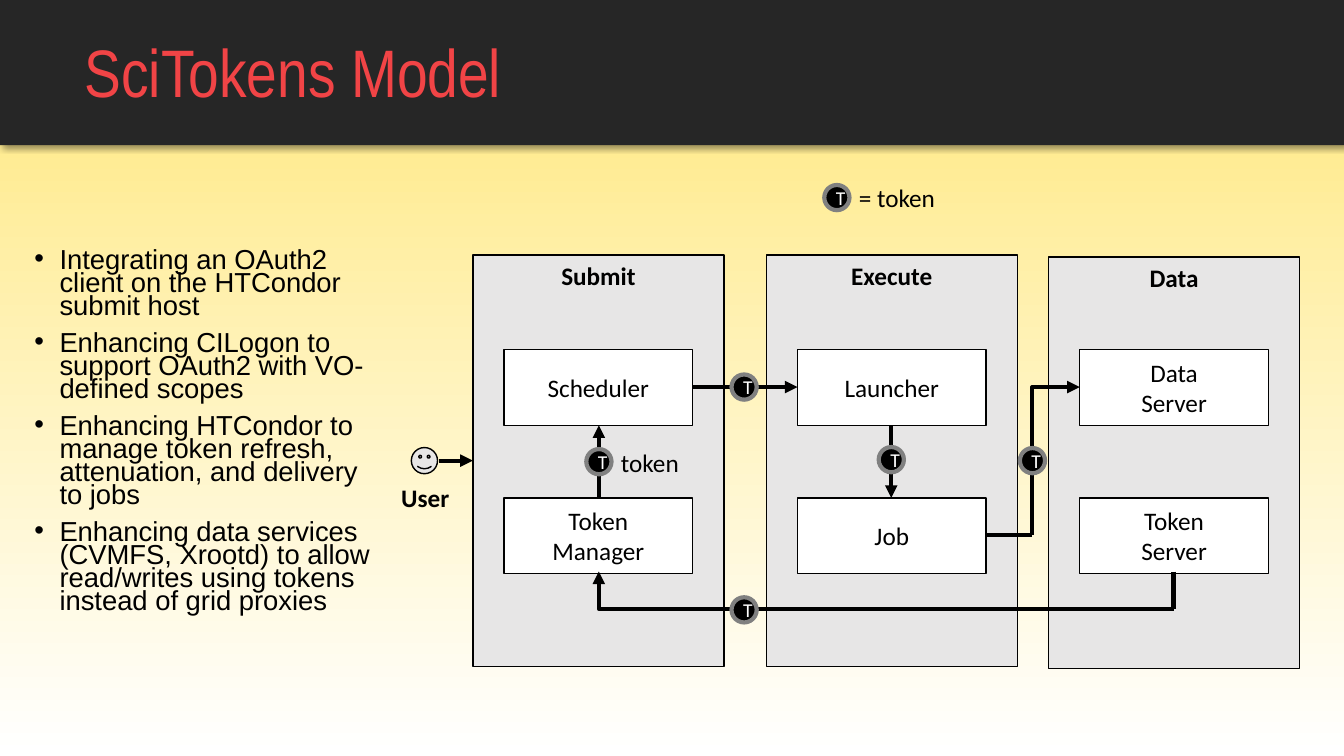
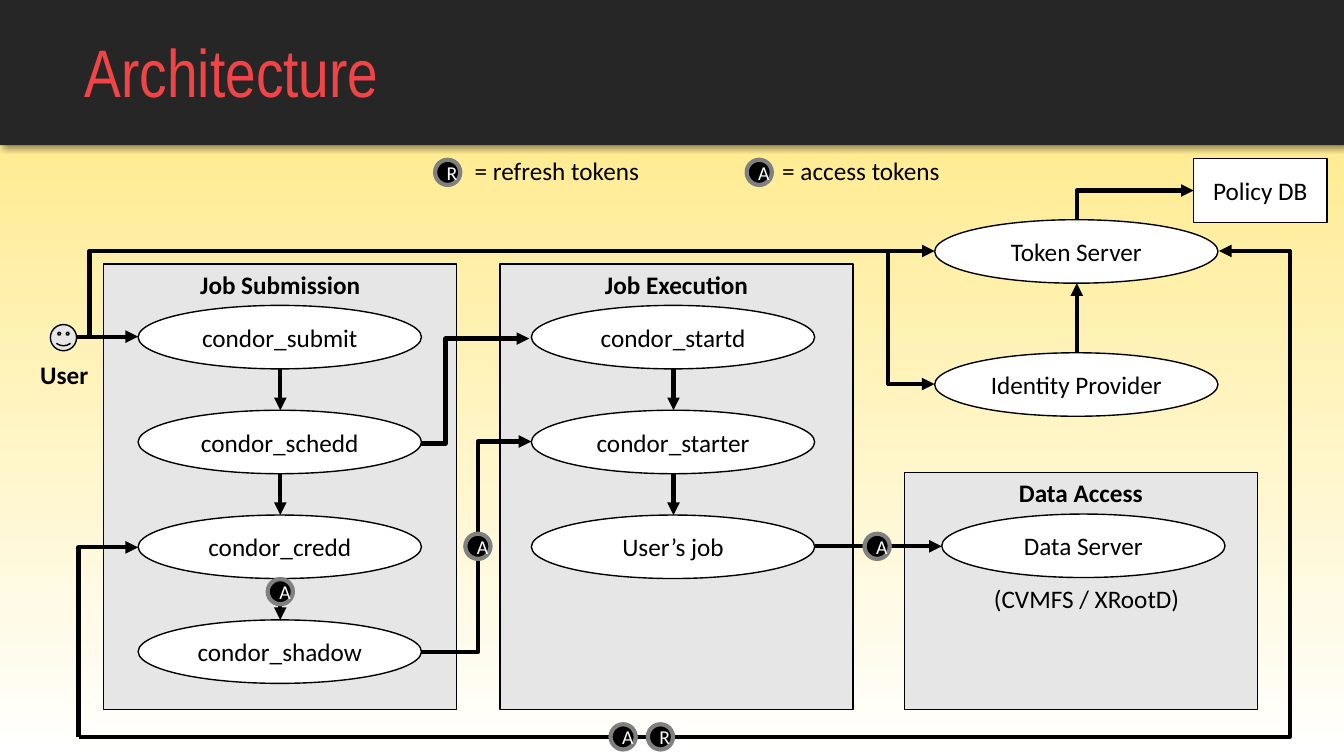
from lxml import etree
from pptx import Presentation
from pptx.dml.color import RGBColor
from pptx.enum.shapes import MSO_CONNECTOR as Link, MSO_SHAPE as Shape
from pptx.enum.text import MSO_ANCHOR as Anchor, MSO_AUTO_SIZE as AutoSize, PP_ALIGN as Align
from pptx.oxml.ns import qn
from pptx.util import Inches, Pt

BLACK = RGBColor(0x00, 0x00, 0x00)
WHITE = RGBColor(0xFF, 0xFF, 0xFF)
PANEL = RGBColor(0xE7, 0xE6, 0xE6)
RING = RGBColor(0x80, 0x80, 0x80)
BAND = RGBColor(0x26, 0x26, 0x26)
TITLE = RGBColor(0xF1, 0x44, 0x46)
SAND = RGBColor(0xFF, 0xE7, 0x79)

TITLE_AND_BODY, TITLE_ONLY = 1, 5
TOKEN_SIZE = 0.25
FACE_SIZE = 0.26


def place(shape, left, top, width, height):
    shape.left, shape.top = Inches(left), Inches(top)
    shape.width, shape.height = Inches(width), Inches(height)


class Sketch:
    """Holds the deck's style and the slide being drawn."""

    def __init__(self):
        self.deck = Presentation()
        self.deck.slide_width, self.deck.slide_height = Inches(13.33), Inches(7.5)
        self.page = None

    def style_master(self):
        """Put the gradient and the shadowed title band on the master."""
        master = self.deck.slide_master
        fill = master.background.fill
        fill.gradient()
        fill.gradient_angle = 270
        for stop, color in zip(fill.gradient_stops, (SAND, WHITE)):
            stop.color.rgb = color

        band = self.shape(Shape.RECTANGLE, 0, 0, 13.33, 1.44, BAND, None)
        effects = band._element.spPr.find(qn("a:effectLst"))
        shadow = etree.SubElement(effects, qn("a:outerShdw"), blurRad=str(Pt(4)),
                                  dist=str(Pt(3)), dir="2700000", rotWithShape="0")
        color = etree.SubElement(shadow, qn("a:srgbClr"), val="000000")
        etree.SubElement(color, qn("a:alpha"), val="40000")
        master.shapes._spTree.insert(2, band._element)

    def new_page(self, title, layout):
        self.page = self.deck.slides.add_slide(self.deck.slide_layouts[layout])
        if self.deck.slides.index(self.page) == 0:
            self.style_master()
        holder = self.page.shapes.title
        place(holder, 0.74, 0.16, 9.19, 1.18)
        frame = holder.text_frame
        frame.auto_size = AutoSize.NONE
        frame.vertical_anchor = Anchor.MIDDLE
        para = frame.paragraphs[0]
        para.line_spacing = 0.9
        self.add_text(para, title, TITLE, 48, font="Arial Narrow", align=Align.LEFT)

    def add_text(self, para, text, color=BLACK, size=18, bold=False,
                 font="Calibri", align=Align.CENTER):
        para.alignment = align
        for number, line in enumerate(text.split("\n")):
            if number:
                para.add_line_break()
            span = para.add_run()
            span.text = line
            span.font.name, span.font.size = font, Pt(size)
            span.font.bold = bold
            span.font.color.rgb = color

    def bullets(self, items, left, top, width, height):
        holder = self.page.placeholders[1]
        place(holder, left, top, width, height)
        frame = holder.text_frame
        frame.auto_size = AutoSize.NONE
        for number, item in enumerate(items):
            para = frame.add_paragraph() if number else frame.paragraphs[0]
            properties = para._p.get_or_add_pPr()
            properties.set("marL", str(Inches(0.25)))
            properties.set("indent", str(-Inches(0.25)))
            para.line_spacing = 0.7
            para.space_before = Pt(10 if number else 0)
            self.add_text(para, item, size=19.6, font="Arial", align=Align.LEFT)

    def shape(self, kind, left, top, width, height, fill, line=BLACK, weight=1):
        shape = self.page.shapes.add_shape(
            kind, Inches(left), Inches(top), Inches(width), Inches(height))
        shape.shadow.inherit = False
        shape.fill.solid()
        shape.fill.fore_color.rgb = fill
        if line is None:
            shape.line.fill.background()
        else:
            shape.line.color.rgb = line
            shape.line.width = Pt(weight)
        return shape

    def panel(self, text, left, top, width, height):
        panel = self.shape(Shape.RECTANGLE, left, top, width, height, PANEL)
        panel.text_frame.vertical_anchor = Anchor.TOP
        self.add_text(panel.text_frame.paragraphs[0], text, bold=True)

    def node(self, kind, text, left, top, width, height):
        node = self.shape(kind, left, top, width, height, WHITE)
        node.text_frame.vertical_anchor = Anchor.MIDDLE
        self.add_text(node.text_frame.paragraphs[0], text)

    def box(self, text, left, top, width=1.87, height=0.75):
        self.node(Shape.RECTANGLE, text, left, top, width, height)

    def oval(self, text, left, top):
        self.node(Shape.OVAL, text, left, top, 2.81, 0.63)

    def token(self, letter, x, y):
        """Draw a lettered disc centred on x, y."""
        disc = self.shape(Shape.OVAL, x - TOKEN_SIZE / 2, y - TOKEN_SIZE / 2,
                          TOKEN_SIZE, TOKEN_SIZE, BLACK, RING, 3)
        disc.text_frame.vertical_anchor = Anchor.MIDDLE
        self.add_text(disc.text_frame.paragraphs[0], letter, WHITE, 14)

    def label(self, text, left, top, width, bold=False):
        box = self.page.shapes.add_textbox(
            Inches(left), Inches(top), Inches(width), Inches(0.4))
        box.text_frame.word_wrap = False
        self.add_text(box.text_frame.paragraphs[0], text, bold=bold, align=Align.LEFT)

    def user(self, left, top):
        self.shape(Shape.SMILEY_FACE, left, top, FACE_SIZE, FACE_SIZE, PANEL)
        self.label("User", left - 0.2, top + 0.3, 0.68, bold=True)

    def link(self, start, end, arrow="tailEnd", kind=Link.STRAIGHT):
        """Join two points; arrow is tailEnd (at end), headEnd (at start) or None."""
        link = self.page.shapes.add_connector(
            kind, *(Inches(value) for value in (*start, *end)))
        link.line.color.rgb = BLACK
        link.line.width = Pt(3)
        if arrow:
            etree.SubElement(link.line._get_or_add_ln(), qn(f"a:{arrow}"), type="triangle")
        etree.SubElement(link._element.spPr, qn("a:effectLst"))
        return link

    def corner(self, start, end, arrow="headEnd"):
        """Go across from start, then up or down to end."""
        link = self.link(start, end, arrow, Link.ELBOW)
        link._element.spPr.find(qn("a:prstGeom")).set("prst", "bentConnector2")

    def step(self, start, end, bend):
        """Go across to x = bend, up or down, then across to end."""
        link = self.link(start, end, kind=Link.ELBOW)
        geometry = link._element.spPr.find(qn("a:prstGeom"))
        guides = geometry.find(qn("a:avLst"))
        if guides is None:
            guides = etree.SubElement(geometry, qn("a:avLst"))
        share = round((bend - start[0]) / (end[0] - start[0]) * 100000)
        etree.SubElement(guides, qn("a:gd"), name="adj1", fmla=f"val {share}")


def draw_model(sketch):
    sketch.new_page("SciTokens Model", TITLE_AND_BODY)
    sketch.bullets([
        "Integrating an OAuth2 client on the HTCondor submit host",
        "Enhancing CILogon to support OAuth2 with VO-defined scopes",
        "Enhancing HTCondor to manage token refresh, attenuation, and delivery to jobs",
        "Enhancing data services (CVMFS, Xrootd) to allow read/writes using tokens "
        "instead of grid proxies",
    ], 0.24, 2.44, 3.61, 4.59)

    for name, left, top, upper, lower in (
            ("Submit", 4.69, 2.53, "Scheduler", "Token\nManager"),
            ("Execute", 7.6, 2.53, "Launcher", "Job"),
            ("Data", 10.4, 2.55, "Data\nServer", "Token\nServer")):
        sketch.panel(name, left, top, 2.49, 4.08)
        sketch.box(upper, left + 0.31, 3.47)
        sketch.box(lower, left + 0.31, 4.94)

    sketch.link((5.94, 4.94), (5.94, 4.22))
    sketch.link((6.87, 3.84), (7.91, 3.84))
    sketch.link((8.84, 4.22), (8.84, 4.94))
    sketch.link((9.77, 5.31), (10.24, 5.31), None)
    sketch.corner((10.71, 3.84), (10.24, 5.31))
    sketch.link((11.64, 5.67), (11.64, 6.04), None)
    sketch.corner((11.64, 6.04), (5.94, 5.67), "tailEnd")
    sketch.link((4.35, 4.57), (4.69, 4.57))

    for x, y in ((5.94, 4.58), (7.38, 3.84), (8.84, 4.56),
                 (10.24, 4.57), (7.38, 6.05), (8.3, 1.96)):
        sketch.token("T", x, y)
    sketch.label("token", 6.06, 4.39, 0.78)
    sketch.label("= token", 8.42, 1.76, 0.97)
    sketch.user(4.08, 4.44)


def draw_architecture(sketch):
    sketch.new_page("Architecture", TITLE_ONLY)
    sketch.panel("Job Submission", 1.03, 2.62, 3.5, 4.42)
    sketch.panel("Job Execution", 4.96, 2.62, 3.5, 4.42)
    sketch.panel("Data Access", 8.97, 4.69, 3.5, 2.35)

    row_top, row_step = 3.03, 1.04
    for left, names in (
            (1.37, ("condor_submit", "condor_schedd", "condor_credd", "condor_shadow")),
            (5.27, ("condor_startd", "condor_starter", "User’s job"))):
        for row, name in enumerate(names):
            top = row_top + row * row_step
            sketch.oval(name, left, top)
            if row:
                middle = left + 1.41
                sketch.link((middle, top - 0.41), (middle, top))
    sketch.oval("Token Server", 9.27, 2.18)
    sketch.oval("Identity Provider", 9.27, 3.5)
    sketch.oval("Data Server", 9.34, 5.1)
    sketch.label("(CVMFS / XRootD)", 9.76, 5.74, 2.06)
    sketch.box("Policy DB", 11.84, 1.57, 1.32, 0.64)

    sketch.link((0.76, 3.34), (1.37, 3.34))
    sketch.link((8.08, 5.42), (9.34, 5.42))
    sketch.link((10.68, 3.5), (10.68, 2.81))
    sketch.step((0.76, 3.34), (9.27, 2.49), 0.89)
    sketch.step((4.18, 4.4), (5.25, 3.36), 4.42)
    sketch.step((4.18, 6.47), (5.27, 4.38), 4.74)
    sketch.step((0.78, 7.31), (12.09, 2.49), 12.79)
    sketch.corner((1.37, 5.43), (0.78, 7.31))
    sketch.corner((11.84, 1.89), (10.68, 2.18))
    sketch.corner((9.27, 3.81), (8.81, 2.49))

    for letter, x, y in (("R", 4.44, 1.71), ("A", 7.53, 1.71), ("A", 2.78, 5.87),
                         ("A", 4.74, 5.42), ("A", 8.7, 5.42),
                         ("A", 6.18, 7.31), ("R", 6.55, 7.31)):
        sketch.token(letter, x, y)
    sketch.label("= refresh tokens", 4.61, 1.49, 1.85)
    sketch.label("= access tokens", 7.66, 1.49, 1.78)
    sketch.user(0.5, 3.22)


def main():
    sketch = Sketch()
    draw_model(sketch)
    draw_architecture(sketch)
    sketch.deck.save("out.pptx")


if __name__ == "__main__":
    main()
